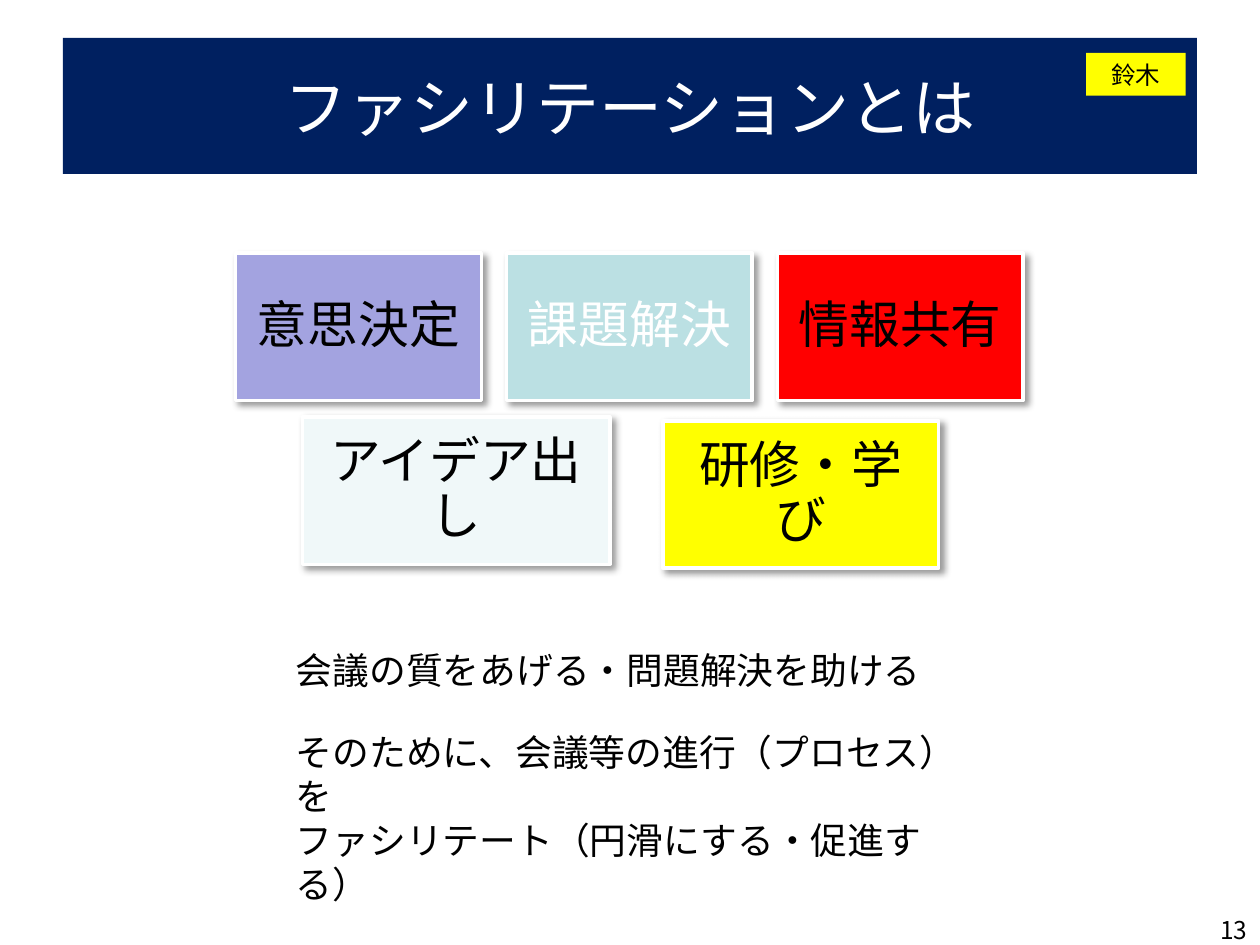
from lxml import etree
from pptx import Presentation as Deck
from pptx.dml.color import RGBColor as Rgb
from pptx.enum.shapes import MSO_SHAPE as Form
from pptx.enum.text import MSO_ANCHOR as Anchor, PP_ALIGN as Align
from pptx.oxml import parse_xml
from pptx.oxml.ns import qn
from pptx.util import Inches, Pt

FONT = "Noto Sans CJK JP"
HUES = {
    "navy": "002060", "white": "FFFFFF", "black": "000000",
    "lilac": "A3A3E0", "aqua": "BBE0E3", "red": "FF0000",
    "pale": "F0F8F9", "yellow": "FFFF00",
}
WIDE, HIGH = 10, 7.5
# Card grid: three columns on top, a looser row below
LEFT, TOP, STEP = 1.87, 2.01, 2.15
CARD_W, CARD_H = 1.95, 1.17
SHADE = (
    '<a:effectLst xmlns:a="http://schemas.openxmlformats.org/drawingml/2006/main">'
    '<a:outerShdw blurRad="50800" dist="38100" dir="2700000" algn="tl" rotWithShape="0">'
    '<a:srgbClr val="000000"><a:alpha val="40000"/></a:srgbClr>'
    '</a:outerShdw></a:effectLst>'
)


def hue(name):
    return Rgb.from_string(HUES[name])


def write(shape, *lines, size=14, color="black", align=Align.CENTER,
          anchor=Anchor.MIDDLE, pad=(0.1, 0.05), pitch=None, gaps=()):
    """Fill a shape with paragraphs; gaps holds the space before each."""
    frame = shape.text_frame
    frame.word_wrap = True
    frame.vertical_anchor = anchor
    frame.margin_left = frame.margin_right = Inches(pad[0])
    frame.margin_top = frame.margin_bottom = Inches(pad[1])
    for i, line in enumerate(lines):
        para = frame.paragraphs[0] if i == 0 else frame.add_paragraph()
        para.alignment = align
        if pitch:
            para.line_spacing = pitch
        if i < len(gaps):
            para.space_before = Pt(gaps[i])
        run = para.add_run()
        run.text = line
        run.font.size = Pt(size)
        run.font.name = FONT
        run.font.color.rgb = hue(color)
        east = etree.SubElement(run.font._element, qn("a:ea"))
        east.set("typeface", FONT)


def box(slide, x, y, w, h, fill):
    shape = slide.shapes.add_shape(
        Form.RECTANGLE, Inches(x), Inches(y), Inches(w), Inches(h))
    shape.shadow.inherit = False
    shape.fill.solid()
    shape.fill.fore_color.rgb = hue(fill)
    shape.line.fill.background()
    return shape


def card(slide, text, x, y, w, fill, color="black"):
    shape = box(slide, x, y, w, CARD_H, fill)
    shape.line.color.rgb = hue("white")
    shape.line.width = Pt(2)
    props = shape._element.spPr
    props.replace(props.find(qn("a:effectLst")), parse_xml(SHADE))
    write(shape, text, size=29, color=color, pad=(0.12, 0.12), pitch=0.9)


def note(slide, x, y, w, h, *lines, **form):
    area = slide.shapes.add_textbox(Inches(x), Inches(y), Inches(w), Inches(h))
    write(area, *lines, anchor=Anchor.TOP, **form)


def main():
    deck = Deck()
    deck.slide_width, deck.slide_height = Inches(WIDE), Inches(HIGH)
    slide = deck.slides.add_slide(deck.slide_layouts[6])

    # Title band and name tag
    band = box(slide, WIDE * 0.05, HIGH * 0.04, WIDE * 0.9, 1.08, "navy")
    write(band, "ファシリテーションとは", size=36, color="white")
    write(box(slide, 8.62, 0.42, 0.79, 0.34, "yellow"), "鈴木")

    # Upper row of cards
    upper = [("意思決定", "lilac", "black"), ("課題解決", "aqua", "white"),
             ("情報共有", "red", "black")]
    for col, (text, fill, color) in enumerate(upper):
        card(slide, text, LEFT + col * STEP, TOP, CARD_W, fill, color)

    # Lower row of cards
    card(slide, "アイデア出し", 2.4, 3.31, 2.44, "pale")
    card(slide, "研修・学び", 5.26, 3.34, 2.19, "yellow")

    # Message and page number
    note(slide, 2.25, 5.09, 5.51, 1.46,
         "会議の質をあげる・問題解決を助ける",
         "そのために、会議等の進行（プロセス）を",
         "ファシリテート（円滑にする・促進する）",
         size=21, align=Align.LEFT, gaps=(0, 21.7))
    note(slide, 7.67, 7.21, 2.33, 0.29, "13", align=Align.RIGHT)

    deck.save("out.pptx")


if __name__ == "__main__":
    main()
